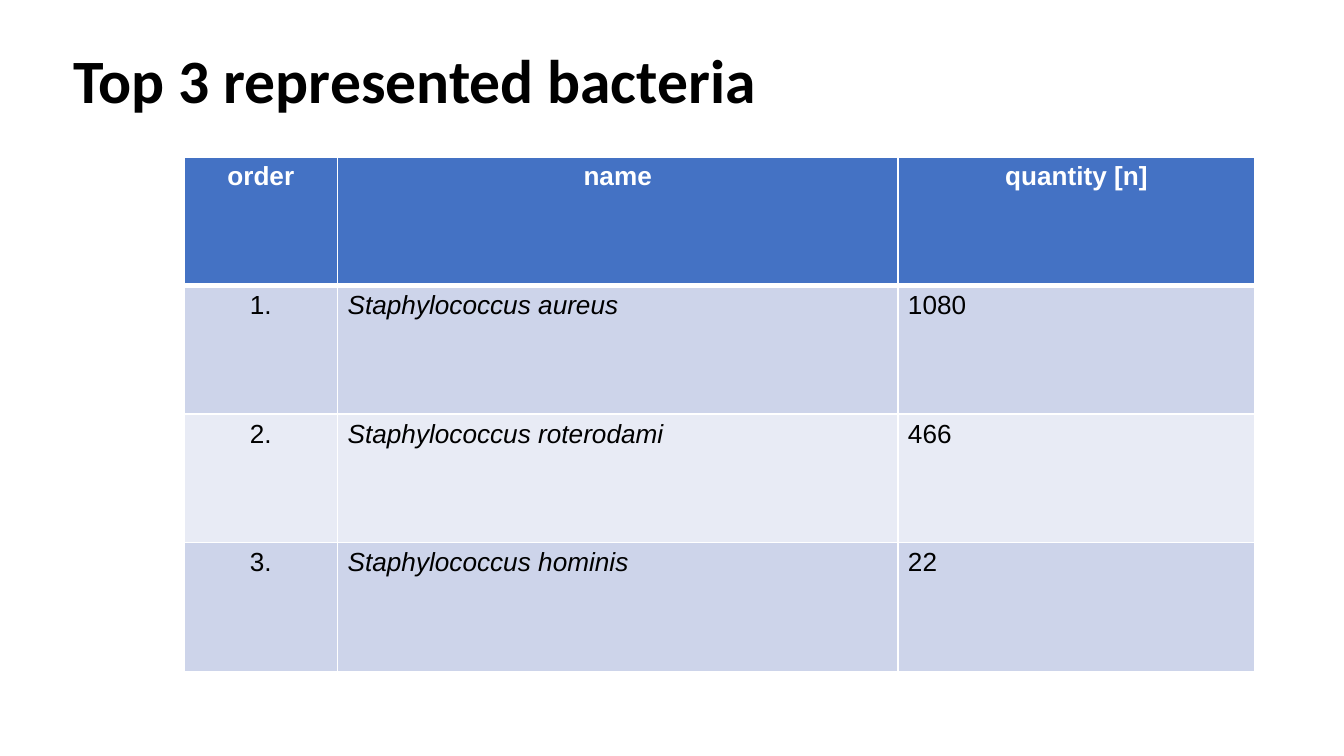
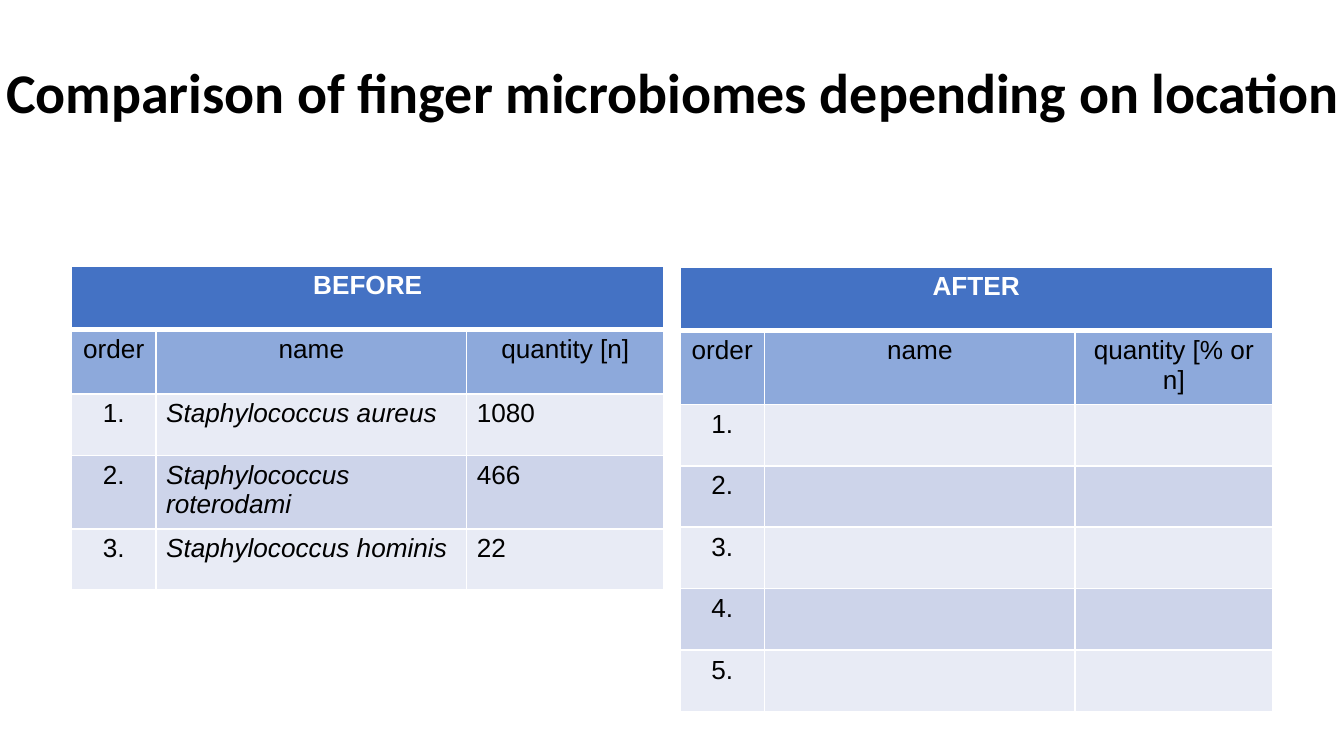
from lxml import etree
from pptx import Presentation
from pptx import util as u
from pptx.dml.color import RGBColor
from pptx.enum import text
from pptx.oxml import ns

WHITE = RGBColor(0xFF, 0xFF, 0xFF)
BLACK = RGBColor(0x00, 0x00, 0x00)
HEADER = RGBColor(0x44, 0x72, 0xC4)
SUBHEADER = RGBColor(0x8D, 0xA9, 0xDB)
BANDS = [RGBColor(0xCD, 0xD4, 0xEA), RGBColor(0xE8, 0xEB, 0xF5)]
CENTER, LEFT = text.PP_ALIGN.CENTER, text.PP_ALIGN.LEFT

BACTERIA = [
    ["1.", "Staphylococcus aureus", "1080"],
    ["2.", "Staphylococcus roterodami", "466"],
    ["3.", "Staphylococcus hominis", "22"],
]


def add_title(s, title, left, top, width, size, align):
    tf = s.shapes.add_textbox(u.Cm(left), u.Cm(top), u.Cm(width), u.Cm(2.76)).text_frame
    tf.word_wrap = True
    tf.vertical_anchor = text.MSO_ANCHOR.MIDDLE
    tf.margin_left = tf.margin_right = u.Cm(0.19)
    tf.margin_top = tf.margin_bottom = u.Cm(0.1)
    p = tf.paragraphs[0]
    p.text = title
    p.alignment = align
    p.line_spacing = 0.9
    f = p.runs[0].font
    f.name, f.size, f.bold, f.color.rgb = "Calibri", u.Pt(size), True, BLACK


def add_grid(s, left, top, widths, heights, rows, heads):
    """Table with `heads` heading rows; the first one is merged if there are two."""
    tbl = s.shapes.add_table(len(rows), len(widths), u.Cm(left), u.Cm(top),
                             u.Cm(sum(widths)), u.Cm(sum(heights))).table
    for col, w in zip(tbl.columns, widths):
        col.width = u.Cm(w)
    for i, (row, h) in enumerate(zip(rows, heights)):
        tbl.rows[i].height = u.Cm(h)
        fill = HEADER if i == 0 else SUBHEADER if i < heads else BANDS[(i + 1) % 2]
        for j, value in enumerate(row):
            cell = tbl.cell(i, j)
            cell.margin_left = cell.margin_right = u.Cm(0.19)
            cell.margin_top = cell.margin_bottom = u.Cm(0.1)

            # White borders, thicker under the header row
            tc_pr = cell._tc.get_or_add_tcPr()
            for side in "LRTB":
                thick = (i, side) in [(0, "B"), (1, "T")]
                ln = etree.SubElement(tc_pr, ns.qn("a:ln" + side),
                                      w=str(u.Pt(3 if thick else 1)))
                solid = etree.SubElement(ln, ns.qn("a:solidFill"))
                etree.SubElement(solid, ns.qn("a:srgbClr"), val=str(WHITE))
            cell.fill.solid()
            cell.fill.fore_color.rgb = fill

            # Cell text
            p = cell.text_frame.paragraphs[0]
            p.text = value
            p.alignment = CENTER if i < heads or j == 0 else LEFT
            for r in p.runs:
                f = r.font
                f.name, f.size = "Arial", u.Pt(14)
                f.bold = i == 0
                f.italic = i >= heads and j == 1
                f.color.rgb = WHITE if i == 0 else BLACK
    if heads == 2:
        tbl.cell(0, 0).merge(tbl.cell(0, len(widths) - 1))


prs = Presentation()
prs.slide_width, prs.slide_height = u.Cm(25.4), u.Cm(14.28)
blank = prs.slide_layouts[6]

# Slide 1: top bacteria
s = prs.slides.add_slide(blank)
add_grid(s, 3.48, 2.96, [2.9, 10.59, 6.75], [2.43] * 4,
         [["order", "name", "quantity [n]"]] + BACTERIA, heads=1)
add_title(s, "Top 3 represented bacteria", 1.2, 0.2, 24.76, 33, LEFT)

# Slide 2: before and after
s = prs.slides.add_slide(blank)
add_title(s, "Comparison of finger microbiomes depending on location",
          -0.56, 0.43, 26.57, 30, CENTER)
empty_ranks = [[f"{n}.", "", ""] for n in range(1, 6)]
for left, top, label, quantity, body in [
    (1.35, 5.02, "BEFORE", "quantity [n]", BACTERIA),
    (12.85, 5.04, "AFTER", "quantity [% or n]", empty_ranks),
]:
    rows = [[label, "", ""], ["order", "name", quantity]] + body
    add_grid(s, left, top, [1.6, 5.87, 3.73], [1.21] * 2 + [1.16] * len(body),
             rows, heads=2)

prs.save("out.pptx")
